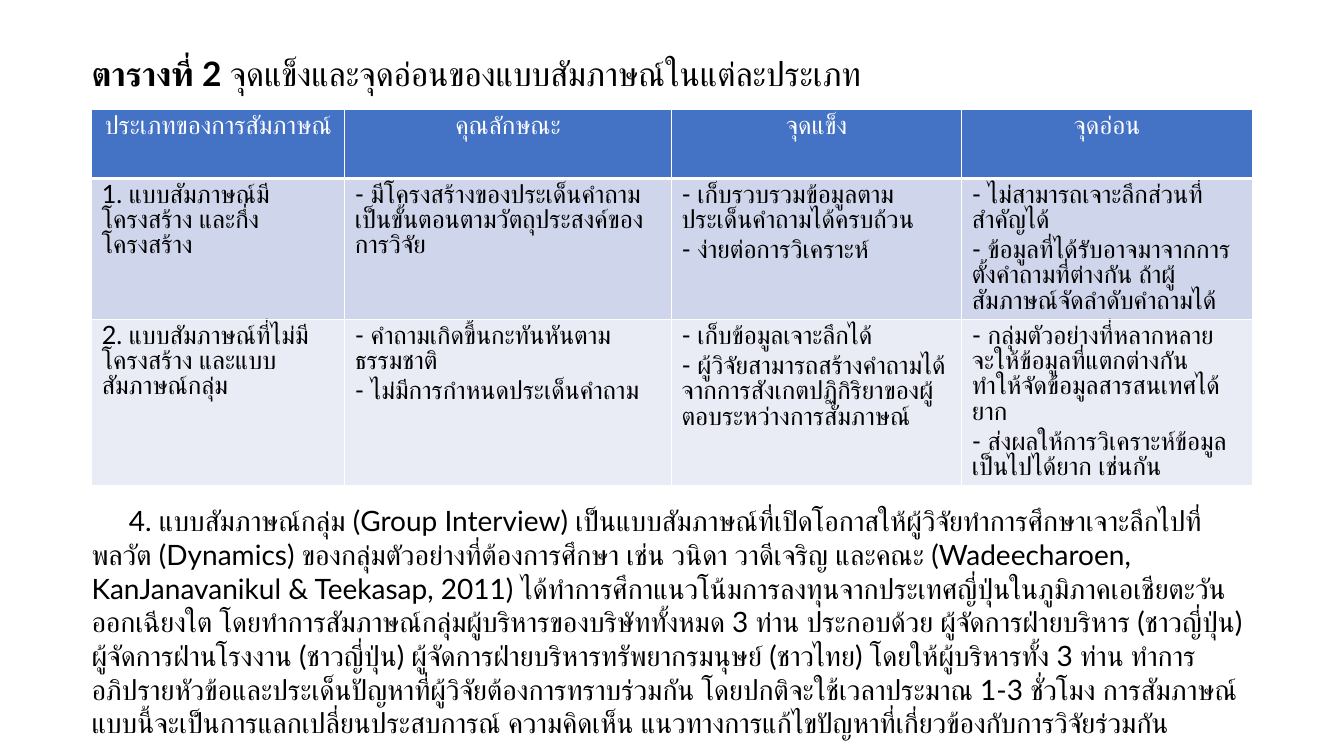
from pptx import Presentation
from pptx.dml.color import RGBColor
from pptx.enum.text import MSO_ANCHOR, MSO_AUTO_SIZE, PP_ALIGN
from pptx.oxml.ns import qn
from pptx.util import Inches, Pt
from lxml import etree

LEFT, CENTER = PP_ALIGN.LEFT, PP_ALIGN.CENTER
TOP, MIDDLE = MSO_ANCHOR.TOP, MSO_ANCHOR.MIDDLE
GROW, NO_FIT = MSO_AUTO_SIZE.SHAPE_TO_FIT_TEXT, MSO_AUTO_SIZE.NONE
BLACK, WHITE = "000000", "FFFFFF"


def color(value):
    return RGBColor.from_string(value)


def add_run(paragraph, text, size, ink=BLACK, bold=False):
    run = paragraph.add_run()
    run.text = text
    for attribute, value in {"name": "Lato", "size": Pt(size), "bold": bold}.items():
        setattr(run.font, attribute, value)
    run.font.color.rgb = color(ink)
    # Thai takes its typeface from the complex script font
    etree.SubElement(run.font._element, qn("a:cs"), typeface="Lato")


prs = Presentation()
prs.slide_width, prs.slide_height = Inches(13.33), Inches(7.5)
slide = prs.slides.add_slide(prs.slide_layouts[5])

# Table caption in the title placeholder
caption = slide.shapes.title
caption_place = {"left": 0.81, "top": 0.26, "width": 11.61, "height": 0.98}
for attribute, value in caption_place.items():
    setattr(caption, attribute, Inches(value))
caption_format = {"vertical_anchor": MIDDLE, "word_wrap": True, "auto_size": NO_FIT}
for attribute, value in caption_format.items():
    setattr(caption.text_frame, attribute, value)
caption_line = caption.text_frame.paragraphs[0]
caption_line.alignment = LEFT
caption_line.line_spacing = 0.9
add_run(caption_line, "ตารางที่ 2 ", 24, bold=True)
add_run(caption_line, "จุดแข็งและจุดอ่อนของแบบสัมภาษณ์ในแต่ละประเภท", 24)

# Comparison of interview types: each cell is a list of paragraphs
interview_rows = [
    [["ประเภทของการสัมภาษณ์"], ["คุณลักษณะ"], ["จุดแข็ง"], ["จุดอ่อน"]],
    [
        ["1. แบบสัมภาษณ์มีโครงสร้าง และกึ่งโครงสร้าง"],
        ["- มีโครงสร้างของประเด็นคำถาม เป็นขั้นตอนตามวัตถุประสงค์ของการวิจัย"],
        ["- เก็บรวบรวมข้อมูลตามประเด็นคำถามได้ครบถ้วน", "- ง่ายต่อการวิเคราะห์"],
        ["- ไม่สามารถเจาะลึกส่วนที่สำคัญได้",
         "- ข้อมูลที่ได้รับอาจมาจากการตั้งคำถามที่ต่างกัน ถ้าผู้สัมภาษณ์จัดลำดับคำถามได้"],
    ],
    [
        ["2. แบบสัมภาษณ์ที่ไม่มีโครงสร้าง และแบบสัมภาษณ์กลุ่ม"],
        ["- คำถามเกิดขึ้นกะทันหันตามธรรมชาติ", "- ไม่มีการกำหนดประเด็นคำถาม"],
        ["- เก็บข้อมูลเจาะลึกได้",
         "- ผู้วิจัยสามารถสร้างคำถามได้จากการสังเกตปฏิกิริยาของผู้ตอบระหว่างการสัมภาษณ์"],
        ["- กลุ่มตัวอย่างที่หลากหลาย จะให้ข้อมูลที่แตกต่างกัน ทำให้จัดข้อมูลสารสนเทศได้ยาก",
         "- ส่งผลให้การวิเคราะห์ข้อมูลเป็นไปได้ยาก เช่นกัน"],
    ],
]
column_widths = [2.51, 3.24, 2.88, 2.88]
row_height = 0.68
# Fill, text colour, alignment, space before each paragraph
row_formats = [
    ("4472C4", WHITE, CENTER, 0),
    ("CFD5EA", BLACK, LEFT, 3.6),
    ("E9EBF5", BLACK, LEFT, 3.6),
]

comparison = slide.shapes.add_table(
    len(interview_rows), len(column_widths), Inches(0.91), Inches(1.09),
    Inches(sum(column_widths)), Inches(row_height * len(interview_rows))).table
for column, width in zip(comparison.columns, column_widths):
    column.width = Inches(width)

for row, contents, row_format in zip(comparison.rows, interview_rows, row_formats):
    fill, ink, alignment, space_before = row_format
    row.height = Inches(row_height)
    for cell, points in zip(row.cells, contents):
        cell.fill.solid()
        cell.fill.fore_color.rgb = color(fill)
        for index, point in enumerate(points):
            frame = cell.text_frame
            paragraph = frame.add_paragraph() if index else frame.paragraphs[0]
            paragraph_format = {"alignment": alignment, "line_spacing": Pt(18),
                                "space_before": Pt(space_before)}
            for attribute, value in paragraph_format.items():
                setattr(paragraph, attribute, value)
            add_run(paragraph, point, 18, ink)

# Thick white rule under the header row
for cell in comparison.rows[0].cells:
    rule = etree.Element(qn("a:lnB"), w=str(Pt(3)))
    rule_fill = etree.SubElement(rule, qn("a:solidFill"))
    etree.SubElement(rule_fill, qn("a:srgbClr"), val=WHITE)
    cell._tc.get_or_add_tcPr().insert(0, rule)

# Group interview paragraph below the table
group_interview = slide.shapes.add_textbox(
    Inches(0.81), Inches(4.95), Inches(11.7), Inches(1.78)).text_frame
for attribute, value in {"word_wrap": True, "auto_size": GROW, "vertical_anchor": TOP}.items():
    setattr(group_interview, attribute, value)
explanation = group_interview.paragraphs[0]
explanation._p.get_or_add_pPr().set("indent", str(Inches(0.37)))
add_run(
    explanation,
    "4. แบบสัมภาษณ์กลุ่ม (Group Interview) เป็นแบบสัมภาษณ์ที่เปิดโอกาสให้ผู้วิจัยทำการศึกษาเจาะลึกไปที่"
    "พลวัต (Dynamics) ของกลุ่มตัวอย่างที่ต้องการศึกษา เช่น วนิดา วาดีเจริญ และคณะ "
    "(Wadeecharoen, KanJanavanikul & Teekasap, 2011) "
    "ได้ทำการศึกาแนวโน้มการลงทุนจากประเทศญี่ปุ่นในภูมิภาคเอเชียตะวันออกเฉียงใต "
    "โดยทำการสัมภาษณ์กลุ่มผู้บริหารของบริษัททั้งหมด 3 ท่าน ประกอบด้วย "
    "ผู้จัดการฝ่ายบริหาร (ชาวญี่ปุ่น) ผู้จัดการฝ่านโรงงาน (ชาวญี่ปุ่น) "
    "ผู้จัดการฝ่ายบริหารทรัพยากรมนุษย์ (ชาวไทย) โดยให้ผู้บริหารทั้ง 3 ท่าน "
    "ทำการอภิปรายหัวข้อและประเด็นปัญหาที่ผู้วิจัยต้องการทราบร่วมกัน "
    "โดยปกติจะใช้เวลาประมาณ 1-3 ชั่วโมง "
    "การสัมภาษณ์แบบนี้จะเป็นการแลกเปลี่ยนประสบการณ์ ความคิดเห็น "
    "แนวทางการแก้ไขปัญหาที่เกี่ยวข้องกับการวิจัยร่วมกัน",
    20)

prs.save("out.pptx")
